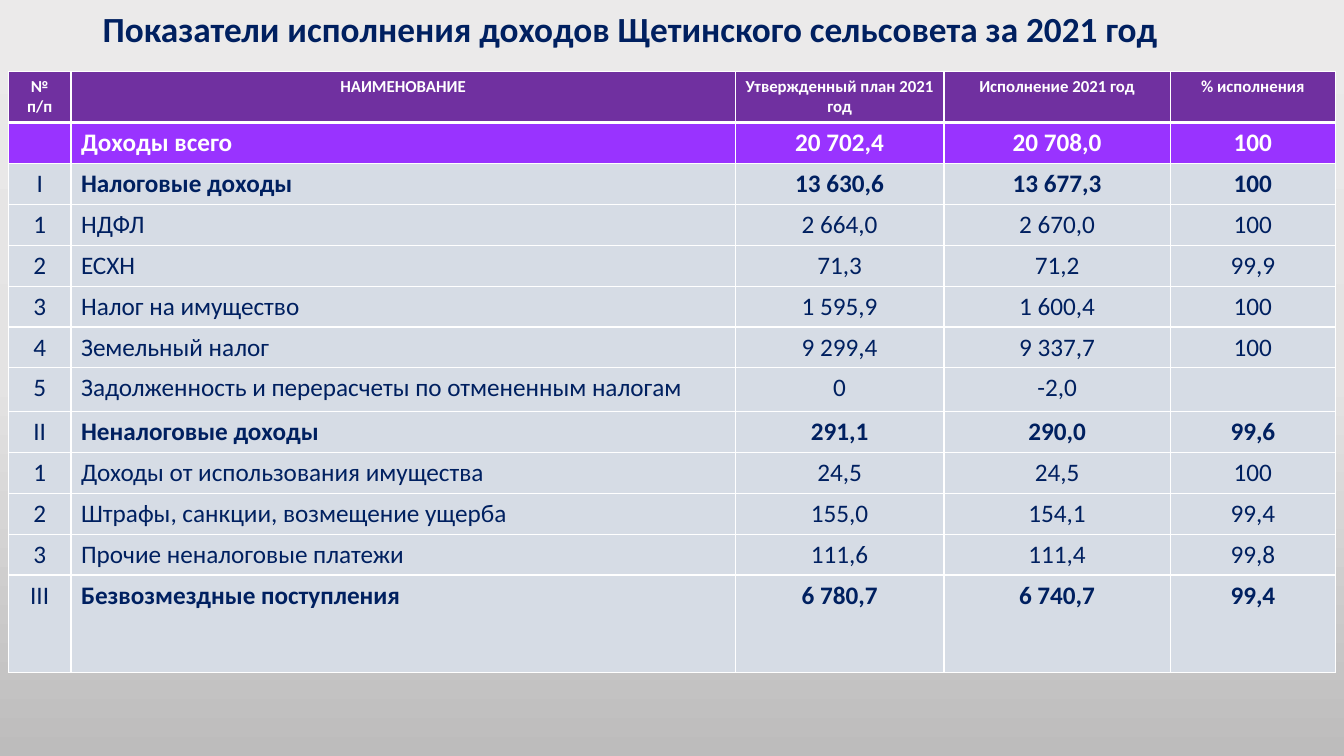
from copy import deepcopy
from dataclasses import dataclass, field

from lxml.etree import SubElement
from pptx import Presentation
from pptx.dml.color import RGBColor as Color
from pptx.enum.text import MSO_ANCHOR as Anchor, PP_ALIGN as Align
from pptx.oxml.ns import qn
from pptx.slide import Slide
from pptx.table import _Cell as Cell
from pptx.text.text import _Paragraph as Paragraph
from pptx.util import Cm, Pt


@dataclass(frozen=True)
class Theme:
    font: str = "Calibri"
    navy: str = "002060"
    white: str = "FFFFFF"
    header_fill: str = "7030A0"
    total_fill: str = "9933FF"
    body_fill: str = "D6DCE5"
    background: tuple[str, ...] = ("EBEAEA", "E4E3E3", "BDBCBC")
    title_size: float = 25.2
    header_size: float = 12
    body_size: float = 18
    thin_line: float = 1
    thick_line: float = 3


THEME = Theme()


@dataclass(frozen=True)
class RowStyle:
    fill: str = THEME.body_fill
    color: str = THEME.navy
    size: float = THEME.body_size
    bold: bool = False
    bold_number: bool = False
    name_align: Align = Align.LEFT
    top_line: float = THEME.thin_line
    bottom_line: float = THEME.thin_line


HEADER = RowStyle(THEME.header_fill, THEME.white, THEME.header_size, True, True,
                  Align.CENTER, bottom_line=THEME.thick_line)
TOTAL = RowStyle(THEME.total_fill, THEME.white, bold=True, top_line=THEME.thick_line)
SECTION = RowStyle(bold=True)
ITEM = RowStyle()


@dataclass(frozen=True)
class IncomeRow:
    number: str
    name: str
    plan: str
    actual: str
    percent: str
    style: RowStyle = field(default=ITEM)
    height: float = 1.03

    def texts(self) -> tuple[str, ...]:
        return self.number, self.name, self.plan, self.actual, self.percent


TITLE = "Показатели исполнения доходов Щетинского сельсовета за 2021 год"
COLUMN_WIDTHS = (1.58, 16.74, 5.26, 5.7, 4.17)
ROWS = (
    IncomeRow("№ п/п", "НАИМЕНОВАНИЕ", "Утвержденный план 2021 год",
              "Исполнение 2021 год", "% исполнения", HEADER, 1.29),
    IncomeRow("", "Доходы всего", "20 702,4", "20 708,0", "100", TOTAL),
    IncomeRow("I", "Налоговые доходы", "13 630,6", "13 677,3", "100", SECTION),
    IncomeRow("1", "НДФЛ", "2 664,0", "2 670,0", "100"),
    IncomeRow("2", "ЕСХН", "71,3", "71,2", "99,9"),
    IncomeRow("3", "Налог на имущество", "1 595,9", "1 600,4", "100"),
    IncomeRow("4", "Земельный налог", "9 299,4", "9 337,7", "100"),
    IncomeRow("5", "Задолженность и перерасчеты по отмененным налогам",
              "0", "-2,0", "", height=1.1),
    IncomeRow("II", "Неналоговые доходы", "291,1", "290,0", "99,6", SECTION),
    IncomeRow("1", "Доходы от использования имущества", "24,5", "24,5", "100"),
    IncomeRow("2", "Штрафы, санкции, возмещение ущерба", "155,0", "154,1", "99,4"),
    IncomeRow("3", "Прочие неналоговые платежи", "111,6", "111,4", "99,8"),
    IncomeRow("III", "Безвозмездные поступления", "6 780,7", "6 740,7", "99,4",
              SECTION, 2.46),
)


def write_text(paragraph: Paragraph, text: str, size: float, color: str,
               bold: bool, align: Align) -> None:
    paragraph.alignment = align
    if not text:
        return
    run = paragraph.add_run()
    run.text = text
    formats = {"name": THEME.font, "size": Pt(size), "bold": bold}
    for attribute, value in formats.items():
        setattr(run.font, attribute, value)
    run.font.color.rgb = Color.from_string(color)


def paint_background(slide: Slide) -> None:
    fill = slide.background.fill
    fill.gradient()
    fill.gradient_angle = 270
    stop_list = next(slide.background._cSld.iter(qn("a:gsLst")))
    stop_list.append(deepcopy(stop_list[-1]))
    last = len(THEME.background) - 1
    for index, (stop, color) in enumerate(zip(fill.gradient_stops, THEME.background)):
        stop.color.rgb = Color.from_string(color)
        stop.position = index / last


def draw_title(slide: Slide) -> None:
    box = slide.shapes.add_textbox(Cm(2.34), Cm(0.18), Cm(29.54), Cm(1.19))
    frame = box.text_frame
    formats = {"word_wrap": True, "vertical_anchor": Anchor.MIDDLE}
    for attribute, value in formats.items():
        setattr(frame, attribute, value)
    paragraph = frame.paragraphs[0]
    paragraph.line_spacing = 0.9
    write_text(paragraph, TITLE, THEME.title_size, THEME.navy, True, Align.LEFT)


def draw_borders(cell: Cell, style: RowStyle) -> None:
    properties = cell._tc.get_or_add_tcPr()
    widths = {"a:lnL": THEME.thin_line, "a:lnR": THEME.thin_line,
              "a:lnT": style.top_line, "a:lnB": style.bottom_line}
    for tag, width in widths.items():
        line = SubElement(properties, qn(tag), w=str(Pt(width)))
        SubElement(SubElement(line, qn("a:solidFill")), qn("a:srgbClr"), val=THEME.white)


def draw_cell(cell: Cell, text: str, column: int, style: RowStyle) -> None:
    draw_borders(cell, style)
    cell.fill.solid()
    cell.fill.fore_color.rgb = Color.from_string(style.fill)
    bold = style.bold_number if column == 0 else style.bold
    align = style.name_align if column == 1 else Align.CENTER
    write_text(cell.text_frame.paragraphs[0], text, style.size, style.color, bold, align)


def draw_table(slide: Slide) -> None:
    width = sum(COLUMN_WIDTHS)
    height = sum(row.height for row in ROWS)
    table = slide.shapes.add_table(len(ROWS), len(COLUMN_WIDTHS), Cm(0.21), Cm(1.8),
                                   Cm(width), Cm(height)).table
    table.horz_banding = False
    for column, column_width in zip(table.columns, COLUMN_WIDTHS):
        column.width = Cm(column_width)
    for table_row, income in zip(table.rows, ROWS):
        table_row.height = Cm(income.height)
        for column, (cell, text) in enumerate(zip(table_row.cells, income.texts())):
            draw_cell(cell, text, column, income.style)


def main() -> None:
    presentation = Presentation()
    presentation.slide_width = Cm(33.87)
    presentation.slide_height = Cm(19.05)
    slide = presentation.slides.add_slide(presentation.slide_layouts[6])
    paint_background(slide)
    draw_title(slide)
    draw_table(slide)
    presentation.save("out.pptx")


if __name__ == "__main__":
    main()
